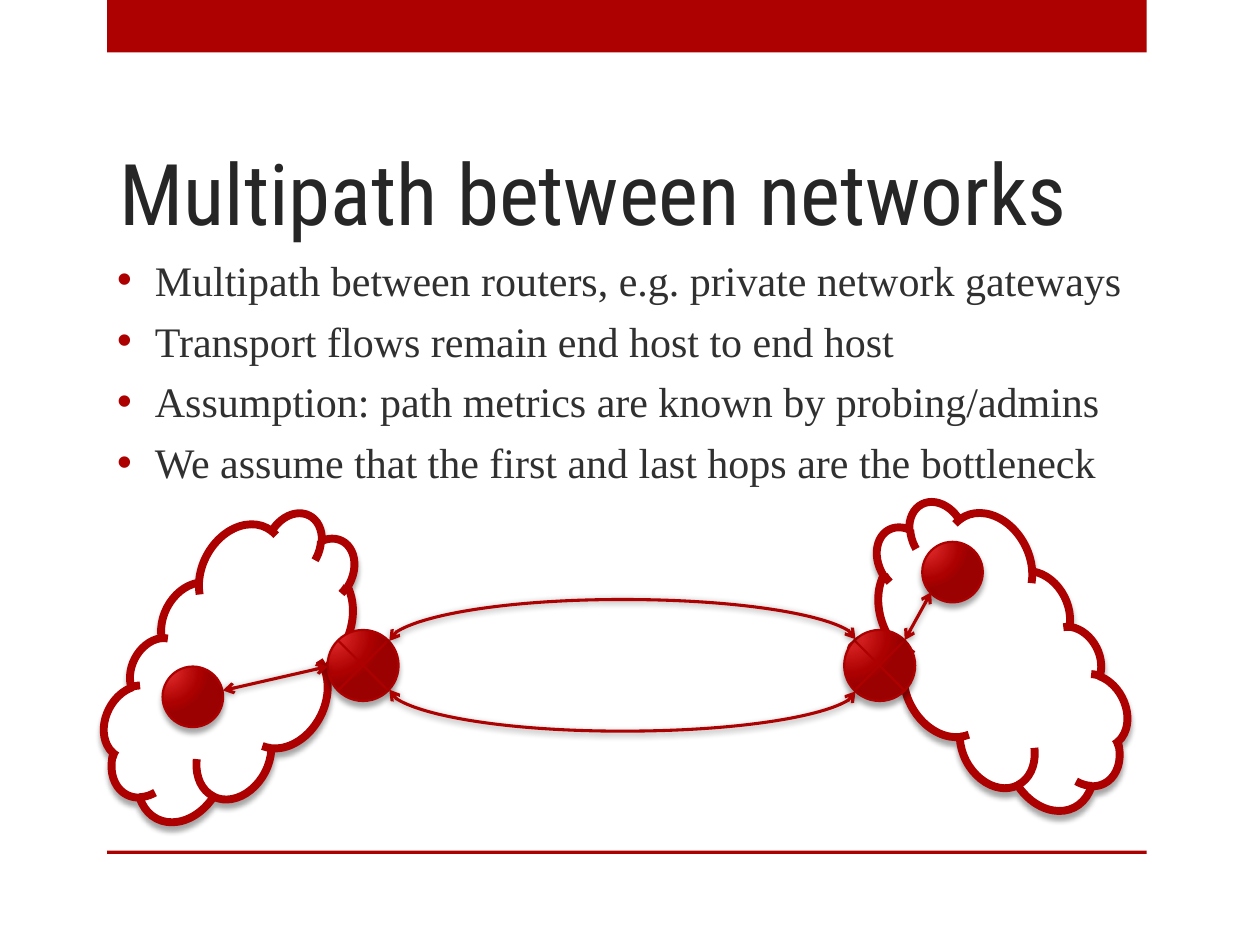
from lxml import etree
from pptx import Presentation
from pptx.dml.color import RGBColor
from pptx.enum.shapes import MSO_CONNECTOR as Link, MSO_SHAPE as Kind
from pptx.enum.text import MSO_ANCHOR as Anchor
from pptx.oxml import parse_xml
from pptx.oxml.ns import nsdecls, qn
from pptx.util import Pt

HUES = {"red": "AD0101", "light": "E62F2F", "dark": "9C0101",
        "white": "FFFFFF", "black": "000000", "title": "262626", "body": "303030"}
POINTS = [
    "Multipath between routers, e.g. private network gateways",
    "Transport flows remain end host to end host",
    "Assumption: path metrics are known by probing/admins",
    "We assume that the first and last hops are the bottleneck",
]


def hue(name):
    return RGBColor.from_string(HUES[name])


def shade(item, alpha=35, blur=3, dist=3, angle=90):
    """Give a shape or connector a soft drop shadow."""
    item.element.spPr.append(parse_xml(
        f'<a:effectLst {nsdecls("a")}><a:outerShdw blurRad="{Pt(blur)}" dist="{Pt(dist)}" '
        f'dir="{angle * 60000}" rotWithShape="0"><a:srgbClr val="{HUES["black"]}">'
        f'<a:alpha val="{alpha * 1000}"/></a:srgbClr></a:outerShdw></a:effectLst>'))


def add_bar(slide, top, height):
    bar = slide.shapes.add_shape(Kind.RECTANGLE, Pt(61.2), Pt(top), Pt(594), Pt(height))
    bar.shadow.inherit = False
    bar.fill.solid()
    bar.fill.fore_color.rgb = hue("red")
    bar.line.fill.background()


def add_cloud(slide, left, top, turn, flip=False):
    cloud = slide.shapes.add_shape(Kind.CLOUD_CALLOUT, Pt(left), Pt(top), Pt(193.7), Pt(109.4))
    cloud.rotation = turn
    if flip:
        cloud.element.spPr.xfrm.set("flipH", "1")
    cloud.fill.solid()
    cloud.fill.fore_color.rgb = hue("white")
    cloud.line.color.rgb = hue("red")
    cloud.line.width = Pt(4.5)
    shade(cloud)


def add_node(slide, kind, left, top, size):
    """Add a round network node with a glossy fill."""
    node = slide.shapes.add_shape(kind, Pt(left), Pt(top), Pt(size), Pt(size))
    stops = "".join(
        f'<a:gs pos="{pos * 1000}"><a:srgbClr val="{HUES[name]}"/></a:gs>'
        for pos, name in ((0, "light"), (76, "red"), (100, "dark")))
    node.element.spPr.append(parse_xml(
        f'<a:gradFill {nsdecls("a")} rotWithShape="1"><a:gsLst>{stops}</a:gsLst>'
        '<a:path path="circle"><a:fillToRect l="15000" t="15000" r="100000" b="100000"/>'
        '</a:path></a:gradFill>'))
    node.line.color.rgb = hue("red")
    node.line.width = Pt(1.25)
    shade(node)
    return node


def style_link(link):
    """Red line with an open arrow at both ends."""
    link.line.color.rgb = hue("red")
    link.line.width = Pt(1.75)
    line = link.line._get_or_add_ln()
    for end in ("a:headEnd", "a:tailEnd"):
        etree.SubElement(line, qn(end), type="arrow")
    shade(link, 40, 4, 1, 88)


def add_hop(slide, start, end):
    ends = [Pt(value) for value in (*start, *end)]
    style_link(slide.shapes.add_connector(Link.STRAIGHT, *ends))


def add_path(slide, nodes, sites, top, turn, flips):
    """Bend a curve between two routers, glued to the given sites."""
    link = slide.shapes.add_connector(Link.CURVE, 0, 0, 0, 0)
    glue = link.element.find(".//" + qn("p:cNvCxnSpPr"))
    for end, node, site in zip(("a:stCxn", "a:endCxn"), nodes, sites):
        etree.SubElement(glue, qn(end), id=str(node.shape_id), idx=str(site))
    link.left, link.top, link.width, link.height = Pt(355.2), Pt(top), Pt(1), Pt(266.4)
    frame = link.element.spPr.xfrm
    frame.set("rot", str(turn * 60000))
    for flip in flips:
        frame.set(flip, "1")
    shape = link.element.spPr.find(qn("a:prstGeom"))
    guides = shape.find(qn("a:avLst"))
    if guides is None:
        guides = etree.SubElement(shape, qn("a:avLst"))
    etree.SubElement(guides, qn("a:gd"), name="adj1", fmla="val 2389500")
    style_link(link)


def add_text(slide, box, lines, font, size, tone):
    frame = slide.shapes.add_textbox(*[Pt(value) for value in box]).text_frame
    frame.word_wrap = True
    frame.text = "\n".join(lines)
    for para in frame.paragraphs:
        face = para.runs[0].font
        face.name, face.size, face.color.rgb = font, Pt(size), hue(tone)
    return frame


def add_bullets(frame):
    for para in frame.paragraphs:
        para.space_before = Pt(6)
        props = para._p.get_or_add_pPr()
        props.set("marL", str(Pt(21.6)))
        props.set("indent", str(-Pt(21.6)))
        tint = etree.SubElement(props, qn("a:buClr"))
        etree.SubElement(tint, qn("a:srgbClr"), val=HUES["red"])
        etree.SubElement(props, qn("a:buFont"), typeface="Arial")
        etree.SubElement(props, qn("a:buChar"), char="•")


def main():
    deck = Presentation()
    deck.slide_width, deck.slide_height = Pt(720), Pt(540)
    slide = deck.slides.add_slide(deck.slide_layouts[6])

    # Bands at head and foot
    add_bar(slide, 0, 30)
    add_bar(slide, 486, 2)

    # Networks
    add_cloud(slide, 38.2, 327.6, 297.2, flip=True)
    add_cloud(slide, 471.6, 321.1, 62.8)

    # Title and bullets
    title = add_text(slide, (61.2, 13.7, 592.6, 126), ["Multipath between networks"],
                     "Roboto Condensed", 48.6, "title")
    title.vertical_anchor = Anchor.BOTTOM
    title.margin_bottom = Pt(1)
    body = add_text(slide, (59.8, 145.2, 594, 142), POINTS, "Times New Roman", 24, "body")
    body.margin_top = body.margin_bottom = 0
    add_bullets(body)

    # Routers and the two paths between them
    routers = [add_node(slide, Kind.FLOWCHART_SUMMING_JUNCTION, left, 360, 40.6)
               for left in (187.2, 482.4)]
    add_path(slide, routers, (7, 1), 232.6, 90, ("flipH", "flipV"))
    add_path(slide, routers, (5, 3), 261.4, 270, ("flipH",))

    # Hosts and their hops to the routers
    for left, top in ((92.9, 380.9), (527, 309.6)):
        add_node(slide, Kind.OVAL, left, top, 34.6)
    add_hop(slide, (127.4, 394.6), (187.2, 380.9))
    add_hop(slide, (517, 365.8), (532.1, 338.4))

    deck.save("out.pptx")


if __name__ == "__main__":
    main()
